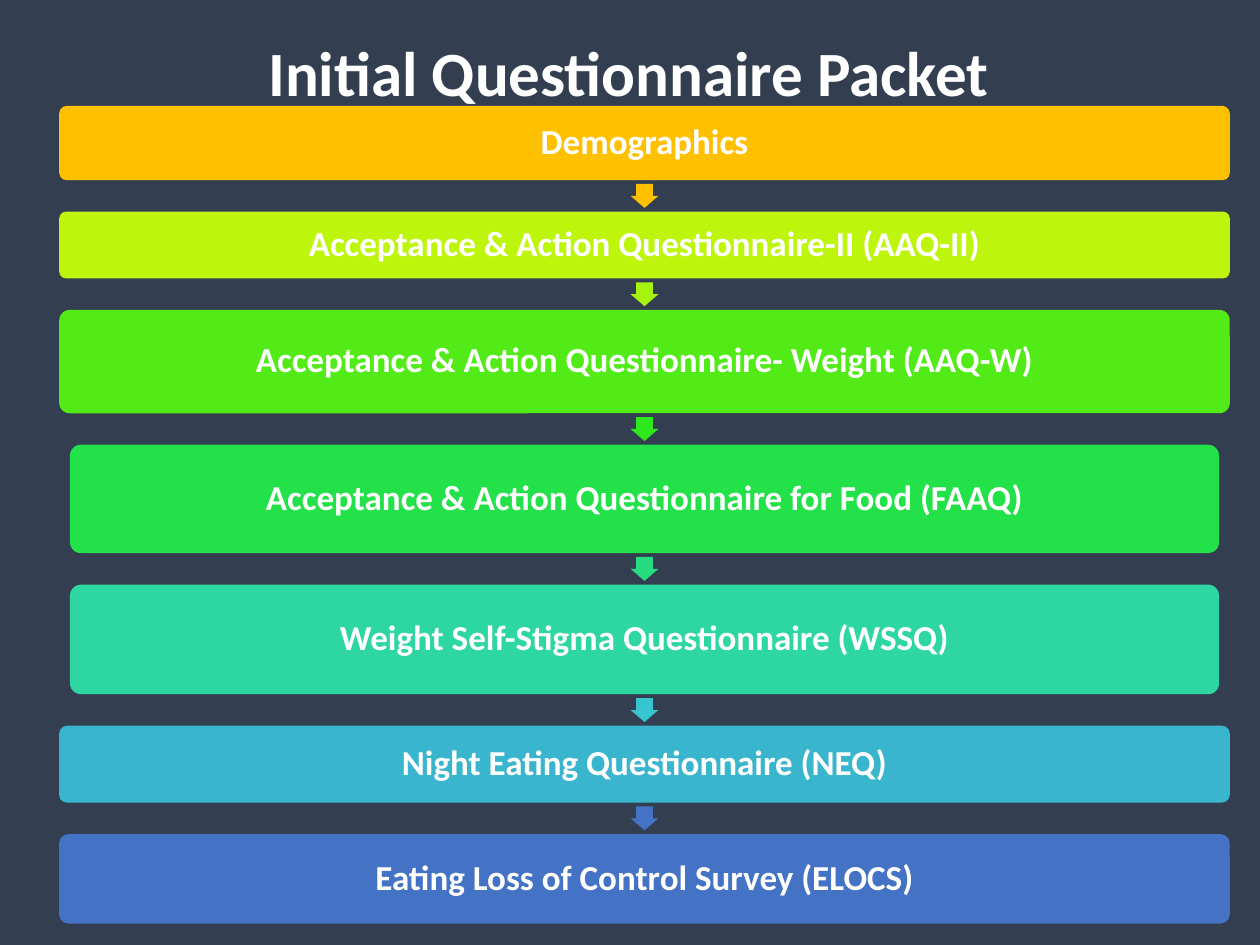
import pptx
import pptx.dml.color
import pptx.enum.shapes
import pptx.enum.text
import pptx.util

SLIDE_WIDTH = pptx.util.Inches(10)
SLIDE_HEIGHT = pptx.util.Inches(7.5)
COLUMN = SLIDE_WIDTH / 100
ROW = SLIDE_HEIGHT / 75
SHAPES = pptx.enum.shapes.MSO_SHAPE
WHITE = "FFFFFF"
GAP_ROWS = 2.5

QUESTIONNAIRES = [
    ("Demographics", 5.9, 92.9, "FFC000", "FFC000"),
    ("Acceptance & Action Questionnaire-II (AAQ-II)", 5.3, 92.9, "BEF50C", "A7F30E"),
    ("Acceptance & Action Questionnaire- Weight (AAQ-W)", 8.2, 92.9, "53EB17", "2EE71C"),
    ("Acceptance & Action Questionnaire for Food (FAAQ)", 8.6, 91.2, "23E148", "29DB80"),
    ("Weight Self-Stigma Questionnaire (WSSQ)", 8.7, 91.2, "2ED7A1", "37C6CF"),
    ("Night Eating Questionnaire (NEQ)", 6.1, 92.9, "39B6CE", "4472C4"),
    ("Eating Loss of Control Survey (ELOCS)", 7.1, 92.9, "4472C4", None),
]


def color(value):
    """Turn a hex string into a colour."""
    return pptx.dml.color.RGBColor.from_string(value)


def set_attributes(target, values):
    """Set every attribute named in a dict of format values."""
    for name, value in values.items():
        setattr(target, name, value)


def grid_box(left, top, width, height):
    """Convert columns and rows to a box in slide units."""
    return [round(length) for length in
            (left * COLUMN, top * ROW, width * COLUMN, height * ROW)]


def write_text(shape, text, size, inset_columns):
    """Write one bold, centred white line in a shape."""
    inset = round(inset_columns * COLUMN)
    frame = shape.text_frame
    frame.text = text
    set_attributes(frame, {
        "word_wrap": True,
        "auto_size": pptx.enum.text.MSO_AUTO_SIZE.NONE,
        "vertical_anchor": pptx.enum.text.MSO_ANCHOR.MIDDLE,
        "margin_left": inset, "margin_right": inset,
        "margin_top": inset, "margin_bottom": inset,
    })
    paragraph = frame.paragraphs[0]
    set_attributes(paragraph, {
        "alignment": pptx.enum.text.PP_ALIGN.CENTER,
        "line_spacing": 0.9,
        "space_before": pptx.util.Pt(0),
    })
    font = paragraph.runs[0].font
    set_attributes(font, {"name": "Calibri", "size": pptx.util.Pt(size), "bold": True})
    font.color.rgb = color(WHITE)


def add_filled_shape(slide, kind, box, fill, adjustments):
    """Add a flat preset shape without an outline."""
    shape = slide.shapes.add_shape(kind, *box)
    shape.shadow.inherit = False
    shape.fill.solid()
    shape.fill.fore_color.rgb = color(fill)
    shape.line.fill.background()
    for index, value in enumerate(adjustments):
        shape.adjustments[index] = value
    return shape


def place_title(slide, box, text):
    """Move the title placeholder to its box and format it."""
    title = slide.shapes.title
    set_attributes(title, dict(zip(("left", "top", "width", "height"), box)))
    write_text(title, text, 36, 0.5)


def add_arrow(slide, center, middle, fill):
    """Add a downward arrow centred on a grid point."""
    width, height = 1.9, 2.2
    box = grid_box(center - width / 2, middle - height / 2, width, height)
    arrow = add_filled_shape(slide, SHAPES.RIGHT_ARROW, box, fill, (0.6, 0.5))
    arrow.rotation = 90


def add_flow(slide, left, top, width, questionnaires):
    """Stack the questionnaire bars with an arrow in each gap."""
    center = left + width / 2
    for text, height, bar_width, fill, arrow_fill in questionnaires:
        box = grid_box(center - bar_width / 2, top, bar_width, height)
        bar = add_filled_shape(slide, SHAPES.ROUNDED_RECTANGLE, box, fill, (0.1,))
        write_text(bar, text, 20, 0.8)
        if arrow_fill:
            add_arrow(slide, center, top + height + GAP_ROWS / 2, arrow_fill)
        top += height + GAP_ROWS


def main():
    """Build the questionnaire packet slide and save it."""
    presentation = pptx.Presentation()
    set_attributes(presentation, {"slide_width": SLIDE_WIDTH, "slide_height": SLIDE_HEIGHT})
    slide = presentation.slides.add_slide(presentation.slide_layouts.get_by_name("Title Only"))
    slide.background.fill.solid()
    slide.background.fill.fore_color.rgb = color("333F50")
    place_title(slide, grid_box(-0.1, 1.9, 100, 8.3), "Initial Questionnaire Packet")
    add_flow(slide, 4.7, 8.4, 92.9, QUESTIONNAIRES)
    presentation.save("out.pptx")


if __name__ == "__main__":
    main()
